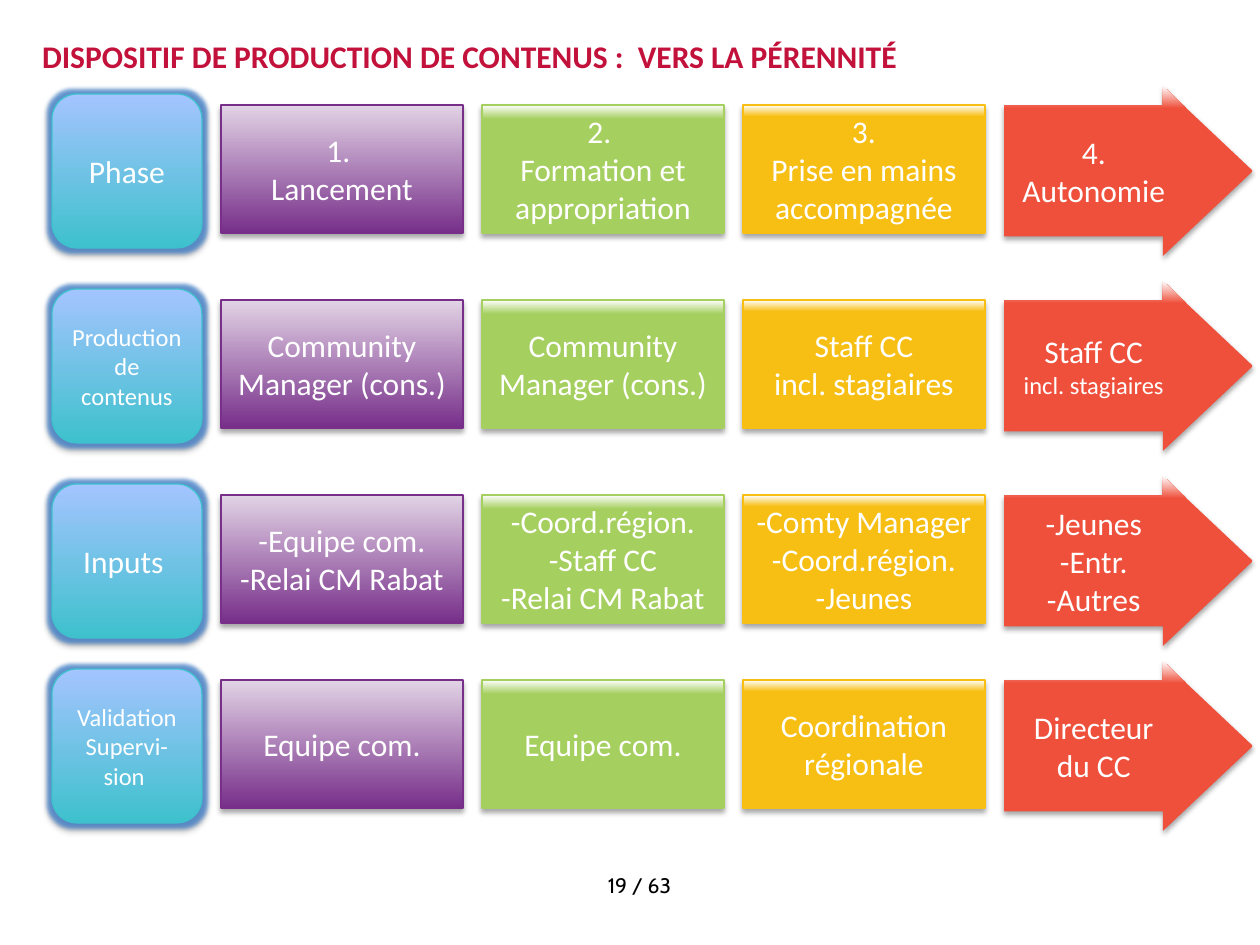
from collections import namedtuple
from dataclasses import dataclass

from lxml.etree import SubElement
from pptx import Presentation
from pptx.dml.color import RGBColor as RGB
from pptx.enum.shapes import MSO_SHAPE as Kind
from pptx.enum.text import MSO_ANCHOR as Anchor, MSO_AUTO_SIZE as Fit, PP_ALIGN as Align
from pptx.oxml.ns import qn
from pptx.util import Emu, Pt

SCALE = 914400 / 126
Box = namedtuple("Box", "x y w h")
Look = namedtuple("Look", "kind stops edge glow")
Row = namedtuple("Row", "y label size cells arrow last")


@dataclass(frozen=True)
class Theme:
    face: str = "Calibri"
    foot: str = "Cabin"
    white: str = "FFFFFF"
    black: str = "000000"
    red: str = "C2113A"
    halo: str = "3F80CD"
    big: int = 18
    small: int = 14
    tiny: int = 12
    edge: float = 0.75


T = Theme()
LABEL = Look(Kind.ROUNDED_RECTANGLE, ((0, "3EC1CD"), (1, "A4C4FF")), "3EC1CD", True)
ARROW = Look(Kind.RIGHT_ARROW, ((0.87, "EF503C"), (1, T.white)), None, False)
CELLS = [
    Look(Kind.RECTANGLE, ((start, tone), (1, top)), tone, False)
    for start, tone, top in (
        (0, "772F8A", "E2D3E5"),
        (0.89, "A5CF5F", T.white),
        (0.91, "F7BF14", T.white),
    )
]
ROWS = [
    Row(86, "Phase", T.big,
        ("1. \nLancement", "2. \nFormation et appropriation",
         "3.\nPrise en mains accompagnée"),
        "4.\nAutonomie", T.big),
    Row(281, "Production de contenus", T.small,
        ("Community Manager (cons.)", "Community Manager (cons.)",
         "Staff CC\nincl. stagiaires"),
        "Staff CC\nincl. stagiaires", T.small),
    Row(476, "Inputs ", T.big,
        ("-Equipe com.\n-Relai CM Rabat",
         "-Coord.région.\n-Staff CC\n-Relai CM Rabat",
         "-Comty Manager\n-Coord.région.\n-Jeunes"),
        "-Jeunes\n-Entr.\n-Autres", T.big),
    Row(661, "Validation Supervi-\nsion ", T.small,
        ("Equipe com.", "Equipe com.", "Coordination régionale"),
        "Directeur du CC", T.big),
]


def px(n):
    return Emu(round(n * SCALE))


def apply(item, values):
    for name, value in values.items():
        setattr(item, name, value)


def place(item, box):
    apply(item, dict(zip(("left", "top", "width", "height"), map(px, box))))


def write(frame, text, size, tone=T.white, face=T.face, bold=False,
          align=Align.CENTER, anchor=Anchor.MIDDLE, last=None):
    apply(frame, {"word_wrap": True, "vertical_anchor": anchor})
    lines = text.split("\n")
    for i, line in enumerate(lines):
        par = frame.paragraphs[0] if i == 0 else frame.add_paragraph()
        par.alignment = align
        run = par.add_run()
        run.text = line
        end = last and i == len(lines) - 1
        apply(run.font, {"name": face, "size": Pt(last if end else size), "bold": bold})
        run.font.color.rgb = RGB.from_string(tone)


def effect(host, tag, tone, alpha, **attrs):
    node = SubElement(host, qn(tag), {k: str(v) for k, v in attrs.items()})
    clr = SubElement(node, qn("a:srgbClr"), val=tone)
    SubElement(clr, qn("a:alpha"), val=str(alpha * 1000))


def block(slide, box, look, text, size, last=None):
    shape = slide.shapes.add_shape(look.kind, *map(px, box))
    shape.fill.gradient()
    shape.fill.gradient_angle = 90
    for stop, (at, tone) in zip(shape.fill.gradient_stops, look.stops):
        stop.position = at
        stop.color.rgb = RGB.from_string(tone)
    if look.edge:
        shape.line.color.rgb = RGB.from_string(look.edge)
        shape.line.width = Pt(T.edge)
    else:
        shape.line.fill.background()
    shape.shadow.inherit = False
    host = shape.element.spPr.find(qn("a:effectLst"))
    if look.glow:
        effect(host, "a:glow", T.halo, 75, rad=Pt(5))
    effect(host, "a:outerShdw", T.black, 35, blurRad=Pt(3.1), dist=Pt(1.8),
           dir=5400000, rotWithShape=0)
    write(shape.text_frame, text, size, last=last)
    return shape


def band(slide, box, row):
    block(slide, Box(box.x, box.y + 8, 150, box.h - 16), LABEL, row.label, row.size)
    left, step = box.x + 169, 261
    for i, (look, text) in enumerate(zip(CELLS, row.cells)):
        block(slide, Box(left + i * step, box.y + 19, 242, box.h - 42), look, text, T.big)
    x = left + len(CELLS) * step
    tip = block(slide, Box(x, box.y, box.x + box.w - x, box.h), ARROW,
                row.arrow, T.big, row.last)
    tip.adjustments[0], tip.adjustments[1] = 0.77, 0.53


def head(slide, box):
    title = slide.shapes.title
    place(title, box)
    frame = title.text_frame
    sides = ("left", "top", "right", "bottom")
    apply(frame, {"auto_size": Fit.NONE, **{f"margin_{side}": 0 for side in sides}})
    write(frame, "DISPOSITIF DE PRODUCTION DE CONTENUS :  VERS LA PÉRENNITÉ", T.big,
          T.red, bold=True, align=Align.LEFT, anchor=Anchor.TOP)


def foot(slide, box):
    frame = slide.shapes.add_textbox(*map(px, box)).text_frame
    frame.auto_size = Fit.SHAPE_TO_FIT_TEXT
    write(frame, "19 / 63", T.tiny, T.black, T.foot, anchor=Anchor.TOP)


def main():
    deck = Presentation()
    apply(deck, {"slide_width": px(1260), "slide_height": px(945)})
    slide = deck.slides.add_slide(deck.slide_layouts[5])
    for row in ROWS:
        band(slide, Box(52, row.y, 1201, 170), row)
    head(slide, Box(42, 37, 1176, 96))
    foot(slide, Box(552, 866, 175, 39))
    deck.save("out.pptx")


if __name__ == "__main__":
    main()
